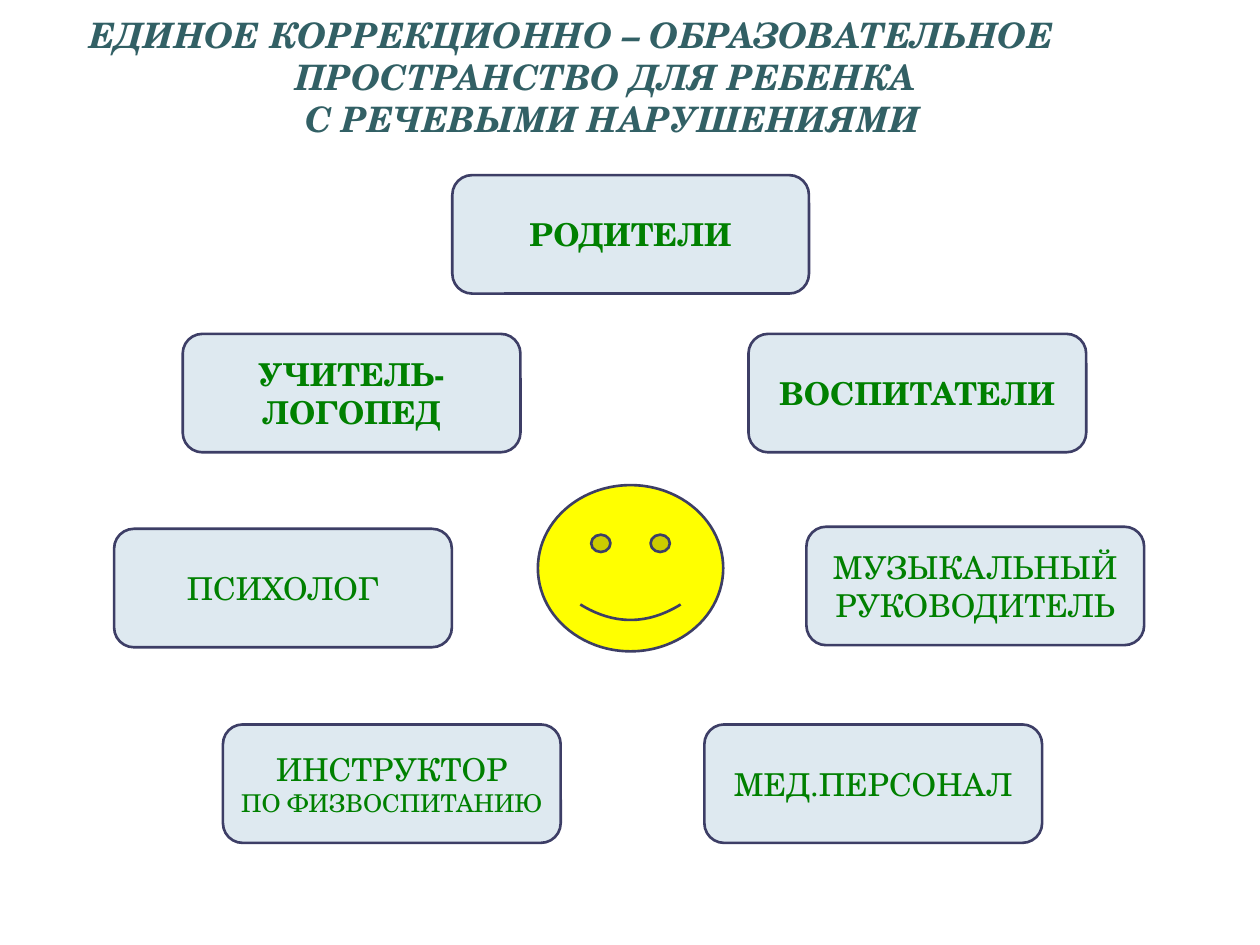
from dataclasses import dataclass

from pptx import Presentation
from pptx.dml.color import RGBColor
from pptx.enum.shapes import MSO_SHAPE
from pptx.enum.text import MSO_ANCHOR, PP_ALIGN
from pptx.util import Pt

ROUNDED = MSO_SHAPE.ROUNDED_RECTANGLE
SMILEY = MSO_SHAPE.SMILEY_FACE
MIDDLE = MSO_ANCHOR.MIDDLE
CENTER = PP_ALIGN.CENTER


@dataclass(frozen=True)
class Theme:
    """Colours, font and type sizes of the slide."""
    font: str = "TeX Gyre Schola"
    title: RGBColor = RGBColor(0x32, 0x60, 0x65)
    label: RGBColor = RGBColor(0x00, 0x80, 0x00)
    card: RGBColor = RGBColor(0xDE, 0xE9, 0xF0)
    face: RGBColor = RGBColor(0xFF, 0xFF, 0x00)
    outline: RGBColor = RGBColor(0x3D, 0x3E, 0x66)
    title_size: int = 20
    label_size: int = 18
    small_size: int = 14
    line_width: float = 1.5


THEME = Theme()
CARD_WIDTH, CARD_HEIGHT = 193, 67.7
TITLE_LINES = [
    ("ЕДИНОЕ КОРРЕКЦИОННО – ОБРАЗОВАТЕЛЬНОЕ", 0),
    ("ПРОСТРАНСТВО ДЛЯ РЕБЕНКА", 39),
    ("С РЕЧЕВЫМИ НАРУШЕНИЯМИ", 47),
]
MAIN_CARDS = [
    ("РОДИТЕЛИ", 258.5, 100.1, 203.8),
    ("УЧИТЕЛЬ-ЛОГОПЕД", 104.4, 190.8, CARD_WIDTH),
    ("ВОСПИТАТЕЛИ", 427.7, 190.8, CARD_WIDTH),
]
SPECIALIST_CARDS = [
    ("ПСИХОЛОГ", 65.2, 302.2, CARD_WIDTH),
    ("МУЗЫКАЛЬНЫЙ РУКОВОДИТЕЛЬ", 460.8, 301, CARD_WIDTH),
    ("МЕД.ПЕРСОНАЛ", 402.5, 414, CARD_WIDTH),
]


def points(box):
    """Turn a box of left, top, width and height into lengths."""
    return [Pt(value) for value in box]


def write_line(frame, text, *, size, color, bold=False, italic=False, indent=0):
    """Add one centred paragraph, using the first one while it is empty."""
    first = frame.paragraphs[0]
    paragraph = frame.add_paragraph() if first.runs else first
    paragraph.alignment = CENTER
    if indent:
        paragraph._p.get_or_add_pPr().set("marL", str(Pt(indent)))
    run = paragraph.add_run()
    run.text = text
    font = run.font
    font.name, font.size = THEME.font, Pt(size)
    font.bold, font.italic = bold, italic
    font.color.rgb = color


def add_outlined(slide, kind, box, fill):
    """Add a filled preset shape with the common outline."""
    shape = slide.shapes.add_shape(kind, *points(box))
    shape.shadow.inherit = False
    shape.fill.solid()
    shape.fill.fore_color.rgb = fill
    shape.line.color.rgb = THEME.outline
    shape.line.width = Pt(THEME.line_width)
    return shape


def add_title(slide, box):
    """Place the three-line heading in the upper part of its box."""
    frame = slide.shapes.add_textbox(*points(box)).text_frame
    frame.word_wrap = True
    frame.vertical_anchor = MIDDLE
    frame.margin_top, frame.margin_bottom = Pt(0), Pt(22)
    for text, indent in TITLE_LINES:
        write_line(frame, text, size=THEME.title_size, color=THEME.title,
                   bold=True, italic=True, indent=indent)


def add_card(slide, box, lines, bold=False):
    """Place a rounded card holding lines of text and size."""
    frame = add_outlined(slide, ROUNDED, box, THEME.card).text_frame
    frame.word_wrap = True
    frame.vertical_anchor = MIDDLE
    for text, size in lines:
        write_line(frame, text, size=size, color=THEME.label, bold=bold)


def add_cards(slide, cards, bold):
    """Place a group of one-label cards."""
    for text, left, top, width in cards:
        add_card(slide, (left, top, width, CARD_HEIGHT),
                 [(text, THEME.label_size)], bold)


def main():
    """Build and save the slide."""
    presentation = Presentation()
    presentation.slide_width, presentation.slide_height = Pt(720), Pt(540)
    slide = presentation.slides.add_slide(presentation.slide_layouts[6])
    add_title(slide, (0, 9.4, 653, 90.7))
    add_outlined(slide, SMILEY, (307.4, 277.2, 105.9, 95), THEME.face)
    add_cards(slide, MAIN_CARDS, bold=True)
    add_cards(slide, SPECIALIST_CARDS, bold=False)
    add_card(slide, (127.4, 414, CARD_WIDTH, CARD_HEIGHT),
             [("ИНСТРУКТОР", THEME.label_size),
              ("ПО ФИЗВОСПИТАНИЮ", THEME.small_size)])
    presentation.save("out.pptx")


if __name__ == "__main__":
    main()
